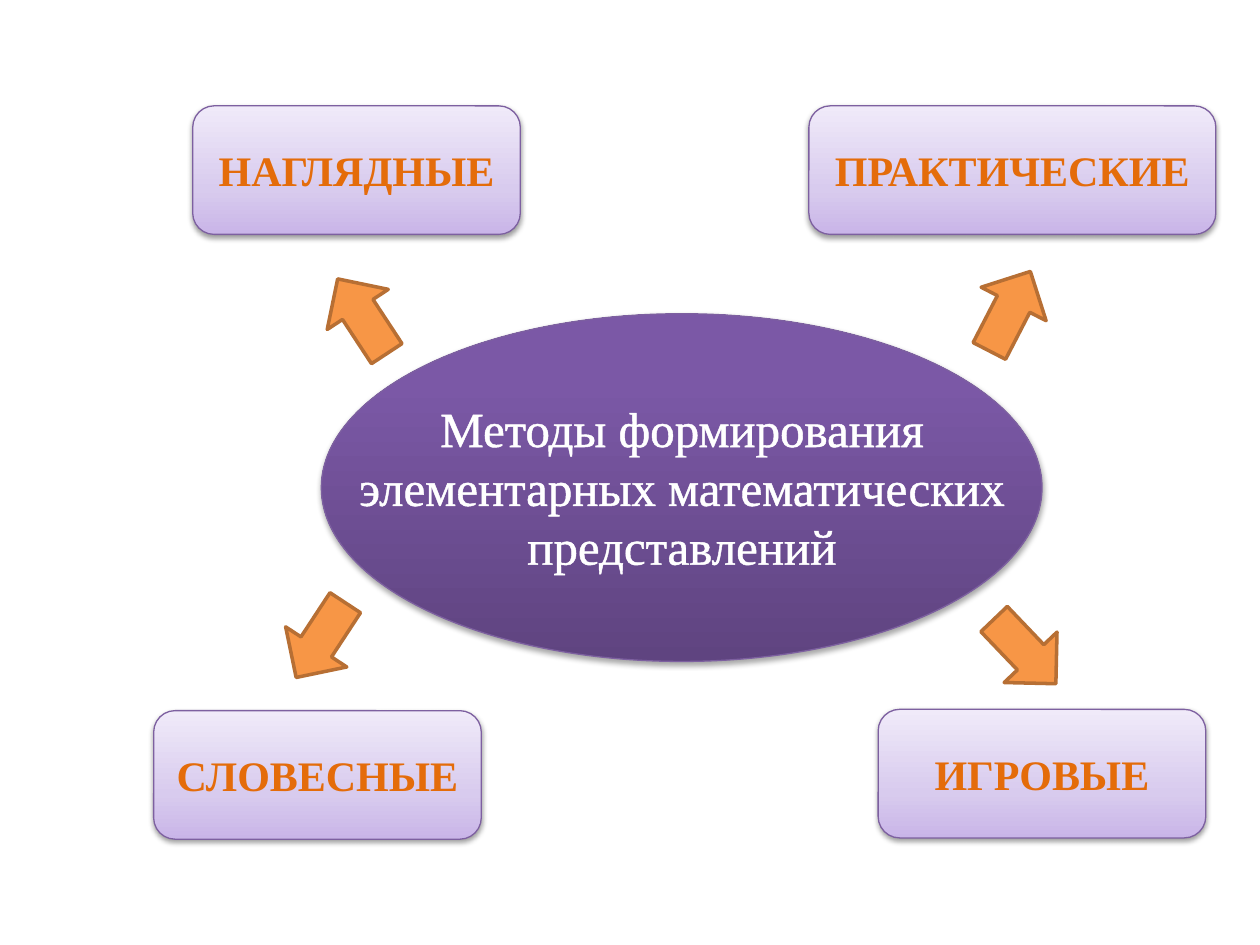
from lxml import etree
from pptx import Presentation
from pptx.dml.color import RGBColor
from pptx.enum.shapes import MSO_SHAPE
from pptx.enum.text import MSO_ANCHOR, MSO_AUTO_SIZE, PP_ALIGN
from pptx.oxml import parse_xml
from pptx.oxml.ns import nsdecls, qn
from pptx.util import Inches, Pt

ELLIPSE = MSO_SHAPE.OVAL
ROUNDED = MSO_SHAPE.ROUNDED_RECTANGLE
ARROW = MSO_SHAPE.RIGHT_ARROW
MIDDLE = MSO_ANCHOR.MIDDLE
CENTER = PP_ALIGN.CENTER
GROW = MSO_AUTO_SIZE.SHAPE_TO_FIT_TEXT

CENTRE_STOPS = [(0, "5F4480"), (80, "7B58A6"), (100, "7C57A8")]
METHOD_STOPS = [(0, "C9B5E8"), (35, "D8CBEE"), (100, "F0EAF9")]


def rgb(value):
    return RGBColor.from_string(value)


class Diagram:
    font = "Times New Roman"
    border = "7D60A0"
    accent = "E46C0A"
    accent_outline = "953735"
    arrow_fill = "F79646"
    arrow_line = "B76F34"

    def __init__(self, slide):
        self.slide = slide

    def shape(self, kind, left, top, width, height, line, line_width):
        sp = self.slide.shapes.add_shape(
            kind, Inches(left), Inches(top), Inches(width), Inches(height))
        sp.shadow.inherit = False
        sp.line.color.rgb = rgb(line)
        sp.line.width = Pt(line_width)
        return sp

    def gradient(self, sp, stops):
        sp.fill.gradient()
        sp.fill.gradient_angle = 90
        gs_list = sp._element.spPr.find(qn("a:gradFill")).find(qn("a:gsLst"))
        for gs in list(gs_list):
            gs_list.remove(gs)
        for position, color in stops:
            gs = etree.SubElement(gs_list, qn("a:gs"), pos=str(position * 1000))
            etree.SubElement(gs, qn("a:srgbClr"), val=color)

    def drop_shadow(self, sp, opacity, distance):
        effects = sp._element.spPr.find(qn("a:effectLst"))
        effects.append(parse_xml(
            f'<a:outerShdw {nsdecls("a")} blurRad="{Pt(3.1)}" '
            f'dist="{Pt(distance)}" dir="5400000" rotWithShape="0">'
            f'<a:srgbClr val="000000"><a:alpha val="{opacity * 1000}"/>'
            '</a:srgbClr></a:outerShdw>'))

    def run(self, p, text, size, color, outline, outline_width, bold=False):
        p.alignment = CENTER
        r = p.add_run()
        r.text = text
        r.font.name = self.font
        r.font.size = Pt(size)
        r.font.bold = bold
        r.font.color.rgb = rgb(color)
        r.font._element.insert(0, parse_xml(
            f'<a:ln {nsdecls("a")} w="{Pt(outline_width)}"><a:solidFill>'
            f'<a:srgbClr val="{outline}"/></a:solidFill></a:ln>'))

    def ellipse(self, left, top, width, height):
        sp = self.shape(ELLIPSE, left, top, width, height, self.border, 0.75)
        self.gradient(sp, CENTRE_STOPS)
        self.drop_shadow(sp, 35, 1.8)

    def method(self, text, left, top, width=2.6):
        sp = self.shape(ROUNDED, left, top, width, 1.02, self.border, 0.75)
        self.gradient(sp, METHOD_STOPS)
        self.drop_shadow(sp, 38, 1.6)
        tf = sp.text_frame
        tf.vertical_anchor = MIDDLE
        self.run(tf.paragraphs[0], text, 24, self.accent,
                 self.accent_outline, 0.71, bold=True)

    def heading(self, lines, left, top, width, height):
        sp = self.slide.shapes.add_textbox(
            Inches(left), Inches(top), Inches(width), Inches(height))
        tf = sp.text_frame
        tf.word_wrap = True
        tf.auto_size = GROW
        for i, line in enumerate(lines):
            p = tf.add_paragraph() if i else tf.paragraphs[0]
            self.run(p, line, 28, "FFFFFF", "FFFFFF", 1.45)

    def arrow(self, left, top, rotation):
        sp = self.shape(ARROW, left, top, 0.71, 0.58, self.arrow_line, 2)
        sp.fill.solid()
        sp.fill.fore_color.rgb = rgb(self.arrow_fill)
        sp.rotation = rotation


def main():
    prs = Presentation()
    prs.slide_width = Inches(10)
    prs.slide_height = Inches(7.5)
    diagram = Diagram(prs.slides.add_slide(prs.slide_layouts[6]))

    diagram.ellipse(2.55, 2.49, 5.72, 2.76)
    diagram.heading(
        ["Методы формирования ", "элементарных математических ", "представлений "],
        2.6, 3.11, 5.72, 1.51)

    diagram.method("СЛОВЕСНЫЕ", 1.22, 5.64)
    diagram.method("НАГЛЯДНЫЕ", 1.53, 0.84)
    diagram.method("ПРАКТИЧЕСКИЕ", 6.42, 0.84, 3.23)
    diagram.method("ИГРОВЫЕ", 6.97, 5.63)

    for left, top, rotation in [(2.52, 2.22, 236.7), (7.66, 2.18, 297.3),
                                (2.19, 4.79, 123.3), (7.78, 4.88, 46.3)]:
        diagram.arrow(left, top, rotation)

    prs.save("out.pptx")


if __name__ == "__main__":
    main()
